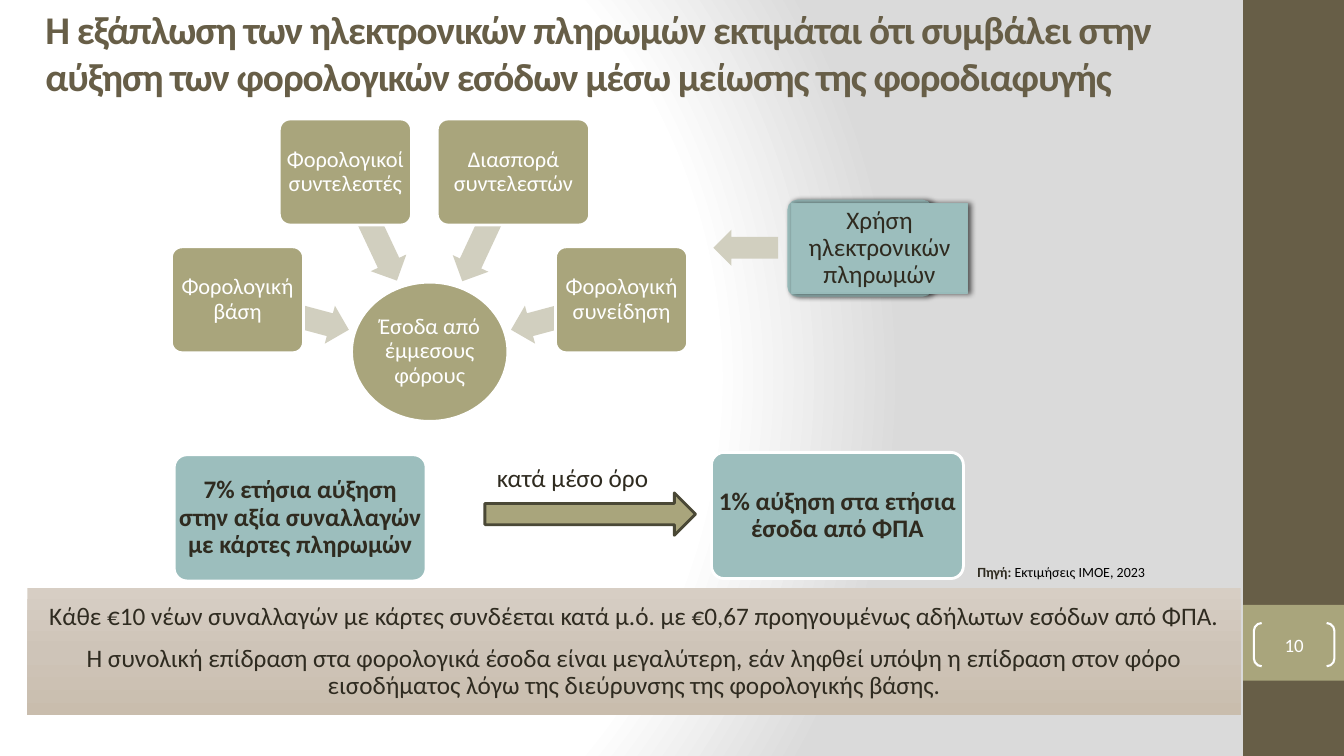
"""Build the slide on electronic payments and indirect tax revenue."""
import lxml.etree
import pptx
import pptx.dml.color
import pptx.enum.shapes
import pptx.enum.text
import pptx.oxml
import pptx.oxml.ns
import pptx.util

Cm = pptx.util.Cm
Pt = pptx.util.Pt
RGB = pptx.dml.color.RGBColor.from_string
SHAPE = pptx.enum.shapes.MSO_SHAPE
ALIGN = pptx.enum.text.PP_ALIGN
ANCHOR = pptx.enum.text.MSO_ANCHOR
NS = pptx.oxml.ns.nsdecls("a")

COLORS = {
    "brown": "675E47",
    "olive": "A9A57C",
    "olive_dark": "4A4836",
    "olive_pale": "D1CFBF",
    "teal": "9CBEBD",
    "teal_edge": "98BBBA",
    "ink": "2F2B20",
    "white": "FFFFFF",
    "black": "000000",
    "grey": "DADADA",
    "sand_light": "D7CEC4",
    "sand": "CEC4B8",
    "sand_dark": "C9BDAD",
}

presentation = pptx.Presentation()
presentation.slide_width = Cm(33.87)
presentation.slide_height = Cm(19.05)
slide = presentation.slides.add_slide(presentation.slide_layouts[5])


def paint_gradient(fill, owner, stops, shade):
    """Give a fill the listed colour stops and shading direction."""
    fill.gradient()
    gradient = next(owner.iter(pptx.oxml.ns.qn("a:gradFill")))
    for child in list(gradient):
        gradient.remove(child)
    stop_xml = "".join(
        f'<a:gs pos="{place * 1000}"><a:srgbClr val="{COLORS[color]}"/></a:gs>'
        for place, color in stops
    )
    gradient.append(pptx.oxml.parse_xml(f"<a:gsLst {NS}>{stop_xml}</a:gsLst>"))
    gradient.append(pptx.oxml.parse_xml(shade))


def add_part(kind, box, fill=None, line=None, width=2, adjust=(), paragraphs=(),
             size=16, color="white", bold=False, inset=0.13, spacing=0.9):
    """Add a preset shape with its text, lengths in centimetres."""
    part = slide.shapes.add_shape(kind, *[Cm(length) for length in box])
    part.shadow.inherit = False
    for index, value in enumerate(adjust):
        part.adjustments[index] = value
    if fill:
        part.fill.solid()
        part.fill.fore_color.rgb = RGB(COLORS[fill])
    else:
        part.fill.background()
    if line:
        part.line.color.rgb = RGB(COLORS[line])
        part.line.width = Pt(width)
    else:
        part.line.fill.background()
    frame = part.text_frame
    frame.word_wrap = True
    frame.vertical_anchor = ANCHOR.MIDDLE
    frame.margin_left = frame.margin_right = Cm(inset)
    frame.margin_top = frame.margin_bottom = Cm(inset)
    for index, words in enumerate(paragraphs):
        paragraph = frame.add_paragraph() if index else frame.paragraphs[0]
        paragraph.text = words
        paragraph.alignment = ALIGN.CENTER
        paragraph.line_spacing = spacing
        paragraph.font.name = "Calibri"
        paragraph.font.size = Pt(size)
        paragraph.font.bold = bold
        paragraph.font.color.rgb = RGB(COLORS[color])
    return part


paint_gradient(
    slide.background.fill, slide.element,
    [(0, "white"), (75, "white"), (100, "grey")],
    f'<a:path {NS} path="circle">'
    '<a:fillToRect l="20000" t="50000" r="100000" b="50000"/></a:path>',
)

add_part(SHAPE.RECTANGLE, (31.33, 0, 2.54, 19.05), "brown")
add_part(SHAPE.RECTANGLE, (31.33, 15.24, 2.54, 1.91), "olive")
add_part(SHAPE.DOUBLE_BRACKET, (31.6, 15.7, 2.03, 1.09), line="white", width=1.5,
         adjust=[0.18], paragraphs=["10"], size=13.5, inset=0, spacing=1.0)

title = slide.shapes.title
title.left, title.top, title.width, title.height = Cm(0.89), Cm(0), Cm(28.85), Cm(2.84)
title.text_frame.text = (
    "Η εξάπλωση των ηλεκτρονικών πληρωμών εκτιμάται ότι συμβάλει στην "
    "αύξηση των φορολογικών εσόδων μέσω μείωσης της φοροδιαφυγής"
)
title.text_frame.vertical_anchor = ANCHOR.TOP
title.text_frame.word_wrap = True
title.text_frame.auto_size = pptx.enum.text.MSO_AUTO_SIZE.NONE
headline = title.text_frame.paragraphs[0]
headline.alignment = ALIGN.LEFT
headline.font.name = "Calibri"
headline.font.size = Pt(28)
headline.font.bold = True
headline.font.color.rgb = RGB(COLORS["brown"])
headline.runs[0]._r.get_or_add_rPr().set("spc", "-75")

for box, words in [
    ((17.93, 11.4, 6.35, 3.18), "1% αύξηση στα ετήσια έσοδα από ΦΠΑ"),
    ((4.39, 11.46, 6.35, 3.18),
     "7% ετήσια αύξηση στην αξία συναλλαγών με κάρτες πληρωμών"),
]:
    add_part(SHAPE.ROUNDED_RECTANGLE, box, "teal", "white", adjust=[0.1],
             paragraphs=[words], size=18, color="ink", bold=True, inset=0.03)

add_part(SHAPE.OVAL, (8.86, 7.11, 3.94, 3.51), "olive", "white",
         paragraphs=["Έσοδα από έμμεσους φόρους"], inset=0.03)
for arrow_box, angle, factor_box, factor in [
    ((5.94, 7.44, 2.9, 0.99), 195, (4.32, 6.22, 3.33, 2.67), "Φορολογική βάση"),
    ((7.85, 5.21, 3.02, 0.99), 244.8, (7.04, 3, 3.33, 2.67), "Φορολογικοί συντελεστές"),
    ((10.77, 5.21, 3.05, 0.99), 295, (11.02, 3, 3.84, 2.67), "Διασπορά συντελεστών"),
    ((12.83, 7.44, 2.9, 0.99), 345, (14, 6.22, 3.33, 2.67), "Φορολογική συνείδηση"),
]:
    add_part(SHAPE.LEFT_ARROW, arrow_box, "olive_pale", adjust=[0.6, 0.5]).rotation = angle
    add_part(SHAPE.ROUNDED_RECTANGLE, factor_box, "olive", "white", adjust=[0.1],
             paragraphs=[factor], inset=0.03)

add_part(SHAPE.RIGHT_ARROW, (12.22, 12.42, 5.31, 1.07), "olive", "olive_dark")
add_part(SHAPE.RECTANGLE, (11.89, 11.53, 5.08, 1.02), paragraphs=["κατά μέσο όρο"],
         size=18, color="ink", spacing=1.0)

conclusion = add_part(
    SHAPE.RECTANGLE, (0.69, 14.83, 30.58, 3.2), size=18, color="ink", inset=0.25,
    paragraphs=[
        "Κάθε €10 νέων συναλλαγών με κάρτες συνδέεται κατά μ.ό. με €0,67 "
        "προηγουμένως αδήλωτων εσόδων από ΦΠΑ.",
        "Η συνολική επίδραση στα φορολογικά έσοδα είναι μεγαλύτερη, εάν ληφθεί υπόψη "
        "η επίδραση στον φόρο εισοδήματος λόγω της διεύρυνσης της φορολογικής βάσης.",
    ],
)
for paragraph in conclusion.text_frame.paragraphs:
    paragraph.space_before = Pt(10)
paint_gradient(
    conclusion.fill, conclusion.element,
    [(0, "sand_light"), (50, "sand"), (100, "sand_dark")],
    f'<a:lin {NS} ang="5400000" scaled="0"/>',
)

add_part(SHAPE.LEFT_ARROW, (17.98, 5.79, 1.63, 0.91), "olive_pale", adjust=[0.6, 0.5])
usage_back = add_part(SHAPE.ROUNDED_RECTANGLE, (19.86, 5.05, 3.63, 2.41), "teal",
                      "teal_edge", 1, adjust=[0.1])
usage = add_part(SHAPE.RECTANGLE, (19.94, 5.13, 4.45, 2.26), "teal", "teal_edge", 1,
                 paragraphs=["Χρήση ηλεκτρονικών πληρωμών"], size=18, color="ink", inset=0.1)
for card in (usage_back, usage):
    effects = next(card.element.iter(pptx.oxml.ns.qn("a:effectLst")))
    effects.append(pptx.oxml.parse_xml(
        f'<a:outerShdw {NS} blurRad="{Pt(4)}" dist="{Pt(2)}" dir="0">'
        f'<a:srgbClr val="{COLORS["black"]}"><a:alpha val="60000"/></a:srgbClr>'
        "</a:outerShdw>"
    ))

source = slide.shapes.add_textbox(Cm(24.38), Cm(14.07), Cm(5.36), Cm(0.69))
source.text_frame.word_wrap = True
credit = source.text_frame.paragraphs[0]
credit.font.name = "Calibri"
credit.font.size = Pt(10)
for words, color, bold in [("Πηγή: ", "ink", True), ("Εκτιμήσεις ΙΜΟΕ, 2023", "black", False)]:
    run = credit.add_run()
    run.text = words
    run.font.bold = bold
    run.font.color.rgb = RGB(COLORS[color])

presentation.save("out.pptx")
